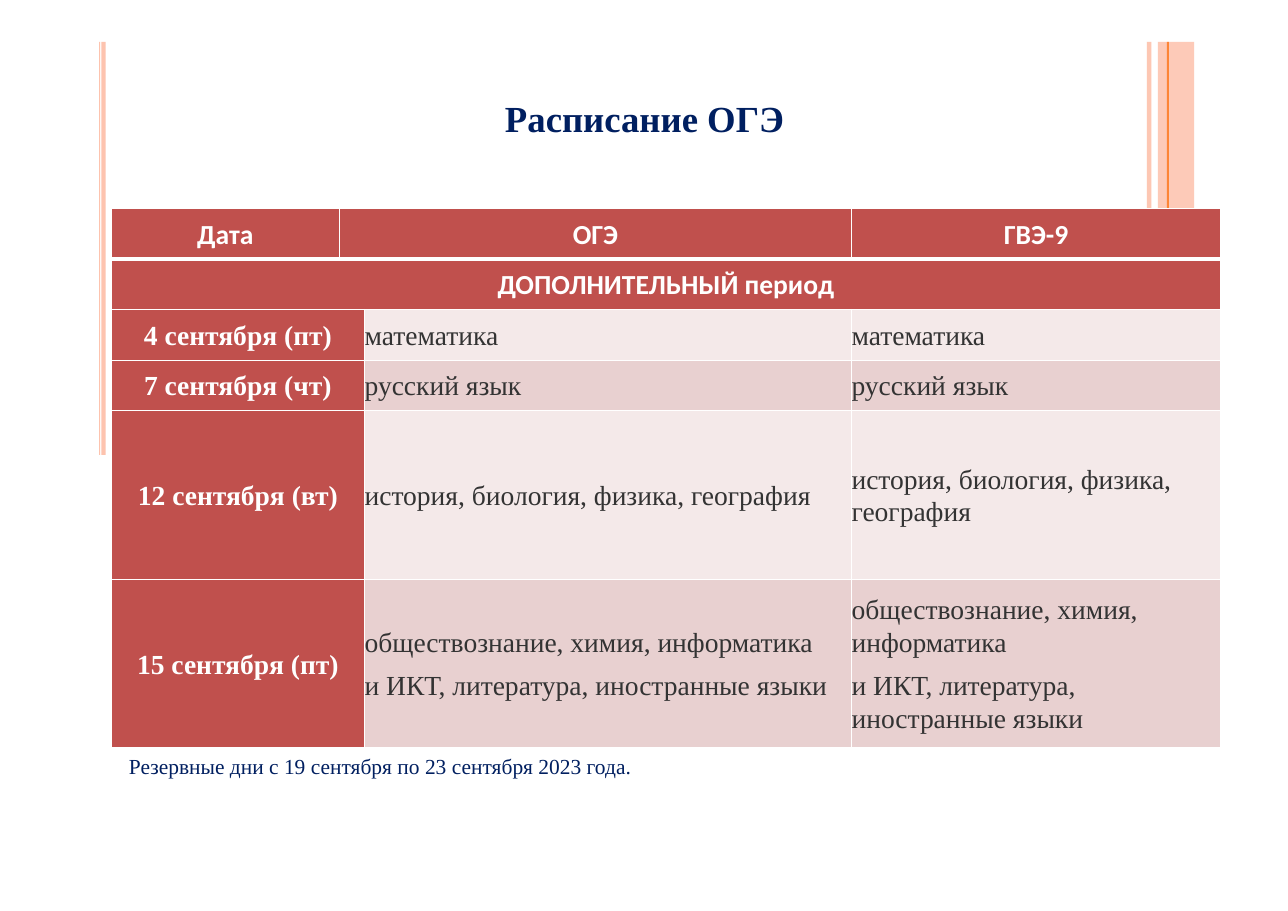
from lxml import etree
from pptx import Presentation
from pptx import util as u
from pptx.dml.color import RGBColor
from pptx.enum import shapes, text
from pptx.oxml.ns import qn

PX = 9144
COLORS = {
    "navy": "001F60", "peach": "FDC3AE", "orange": "FD8536", "white": "FFFFFF",
    "red": "C0504D", "ink": "333333", "light": "F4E9E9", "rose": "E8D0D0",
}
SERIF, SANS = "Times New Roman", "Calibri"
CENTER, LEFT = text.PP_ALIGN.CENTER, text.PP_ALIGN.LEFT
NO_INSETS = dict.fromkeys(("margin_left", "margin_top", "margin_right", "margin_bottom"), 0)
CELL_SPACING = {"line_spacing": 1.07, "space_after": u.Pt(6.8)}

BARS = [
    (1041, 4, "peach", 93),
    (90, 1, "peach", 100),
    (92, 4, "peach", 100),
    (1051, 33, "peach", 87),
    (1059, 2, "orange", 100),
]
BAR_TOP, BAR_HEIGHT = 38, 375

COLUMNS = [207, 23, 442, 335]
ROWS = [46] * 4 + [153] * 2
HEADINGS = [(0, 0, 0, "Дата"), (0, 1, 2, "ОГЭ"), (0, 3, 3, "ГВЭ-9"),
            (1, 0, 3, "ДОПОЛНИТЕЛЬНЫЙ период")]
EXAMS = [
    ("4 сентября (пт)", "математика"),
    ("7 сентября (чт)", "русский язык"),
    ("12 сентября (вт)", "история, биология, физика, география"),
    ("15 сентября (пт)",
     "обществознание, химия, информатика\nи ИКТ, литература, иностранные языки"),
]
DATE_STYLE = {"name": SERIF, "size": u.Pt(18), "bold": True}
HEADING_STYLE = {**DATE_STYLE, "name": SANS}
SUBJECT_STYLE = {**DATE_STYLE, "bold": False}


def rgb(color):
    return RGBColor.from_string(COLORS[color])


def px(*lengths):
    return [length * PX for length in lengths]


def apply(target, values):
    for name, value in values.items():
        setattr(target, name, value)


def paint(fill, color):
    fill.solid()
    fill.fore_color.rgb = rgb(color)


def write(frame, words, style, color, align, spacing):
    frame.text = words
    for paragraph in frame.paragraphs:
        apply(paragraph, {"alignment": align, **spacing})
        for run in paragraph.runs:
            apply(run.font, style)
            run.font.color.rgb = rgb(color)


def add_bar(slide, left, width, color, opacity):
    bar = slide.shapes.add_shape(shapes.MSO_SHAPE.RECTANGLE,
                                 *px(left, BAR_TOP, width, BAR_HEIGHT))
    bar.shadow.inherit = False
    bar.line.fill.background()
    paint(bar.fill, color)
    if opacity < 100:
        tint = bar.fill._xPr.find(qn("a:solidFill"))[0]
        etree.SubElement(tint, qn("a:alpha"), val=str(opacity * 1000))


def add_label(slide, box, words, style, align):
    frame = slide.shapes.add_textbox(*px(*box)).text_frame
    apply(frame, {**NO_INSETS, "word_wrap": True})
    write(frame, words, style, "navy", align, {})


def add_borders(cell, top, bottom):
    properties = cell._tc.get_or_add_tcPr()
    for side, points in (("L", 1), ("R", 1), ("T", top), ("B", bottom)):
        border = etree.SubElement(properties, qn("a:ln" + side), w=str(u.Pt(points)))
        fill = etree.SubElement(border, qn("a:solidFill"))
        etree.SubElement(fill, qn("a:srgbClr"), val=COLORS["white"])


def fill_cell(table, row, first, last, words, style, ink, back, align):
    for column in range(first, last + 1):
        cell = table.cell(row, column)
        add_borders(cell, 3 if row == 1 else 1, 3 if row == 0 else 1)
        paint(cell.fill, back)
    cell = table.cell(row, first)
    if last > first:
        cell.merge(table.cell(row, last))
    apply(cell, {**NO_INSETS, "vertical_anchor": text.MSO_ANCHOR.MIDDLE})
    write(cell.text_frame, words, style, ink, align, CELL_SPACING)


def add_schedule(slide):
    table = slide.shapes.add_table(len(ROWS), len(COLUMNS),
                                   *px(101, 189, sum(COLUMNS), sum(ROWS))).table
    apply(table, {"first_row": False, "horz_banding": False})
    for column, width in zip(table.columns, COLUMNS):
        column.width = width * PX
    for row, height in zip(table.rows, ROWS):
        row.height = height * PX
    for row, first, last, words in HEADINGS:
        fill_cell(table, row, first, last, words, HEADING_STYLE, "white", "red", CENTER)
    for row, (date, subjects) in enumerate(EXAMS, start=2):
        fill_cell(table, row, 0, 1, date, DATE_STYLE, "white", "red", CENTER)
        band = "rose" if row % 2 else "light"
        for column in (2, 3):
            fill_cell(table, row, column, column, subjects, SUBJECT_STYLE, "ink", band, LEFT)


def main():
    deck = Presentation()
    deck.slide_width, deck.slide_height = px(1169, 827)
    slide = deck.slides.add_slide(deck.slide_layouts[6])
    for bar in BARS:
        add_bar(slide, *bar)
    add_label(slide, (259, 87, 652, 40), "Расписание ОГЭ",
              {"name": SERIF, "size": u.Pt(24), "bold": True}, CENTER)
    add_label(slide, (117, 684, 943, 24),
              "Резервные дни с 19 сентября по 23 сентября 2023 года.",
              {"name": SERIF, "size": u.Pt(14)}, LEFT)
    add_schedule(slide)
    deck.save("out.pptx")


if __name__ == "__main__":
    main()
